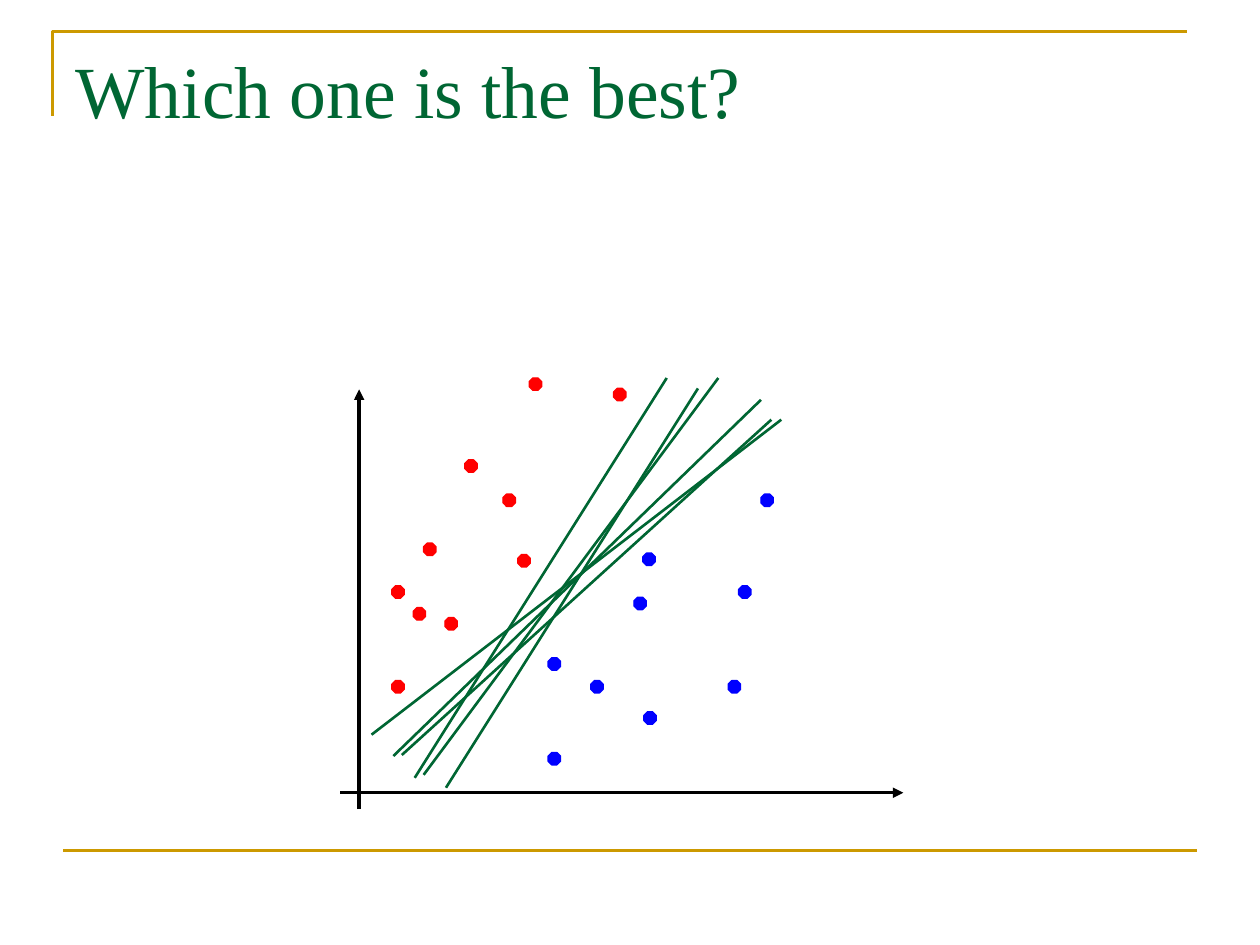
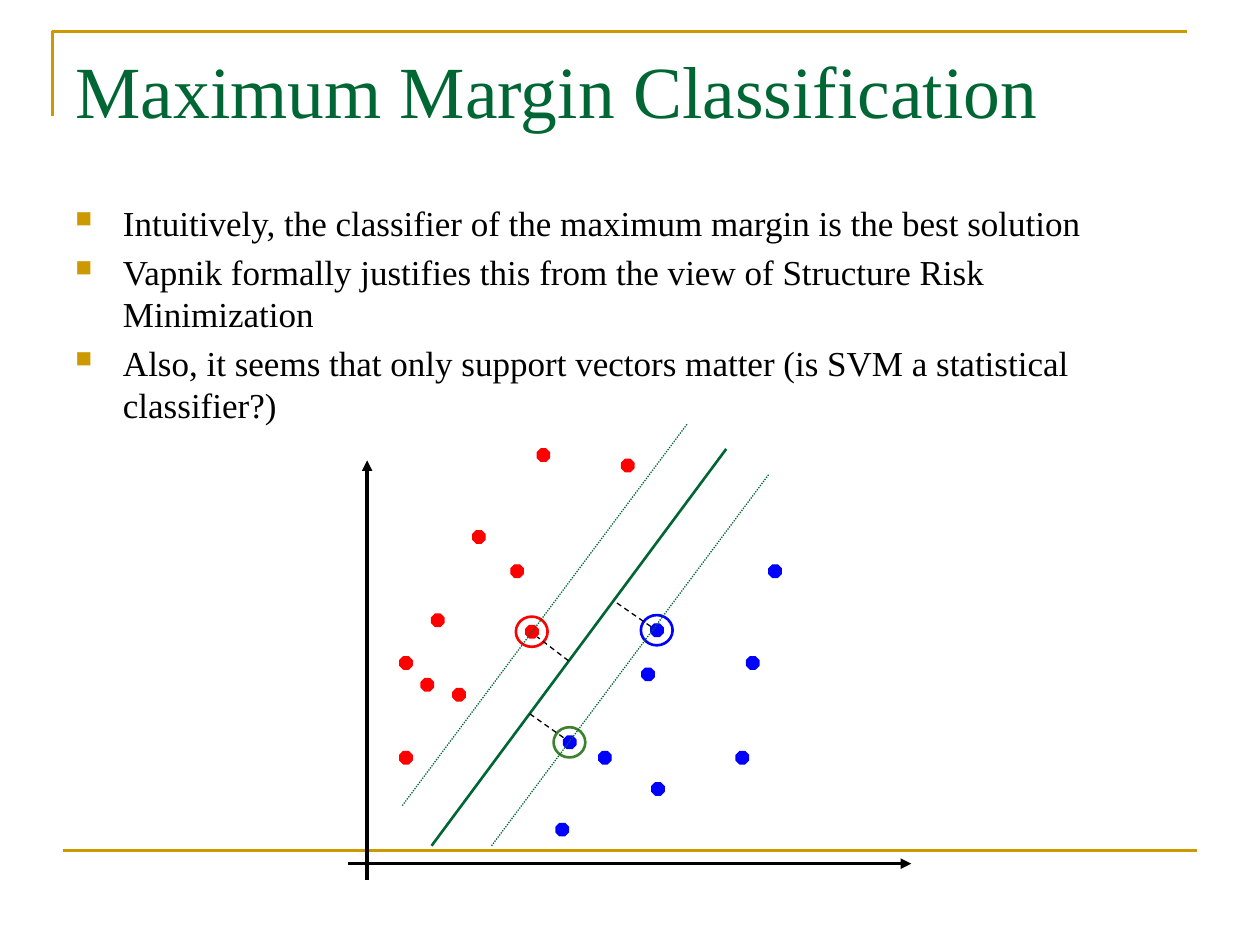
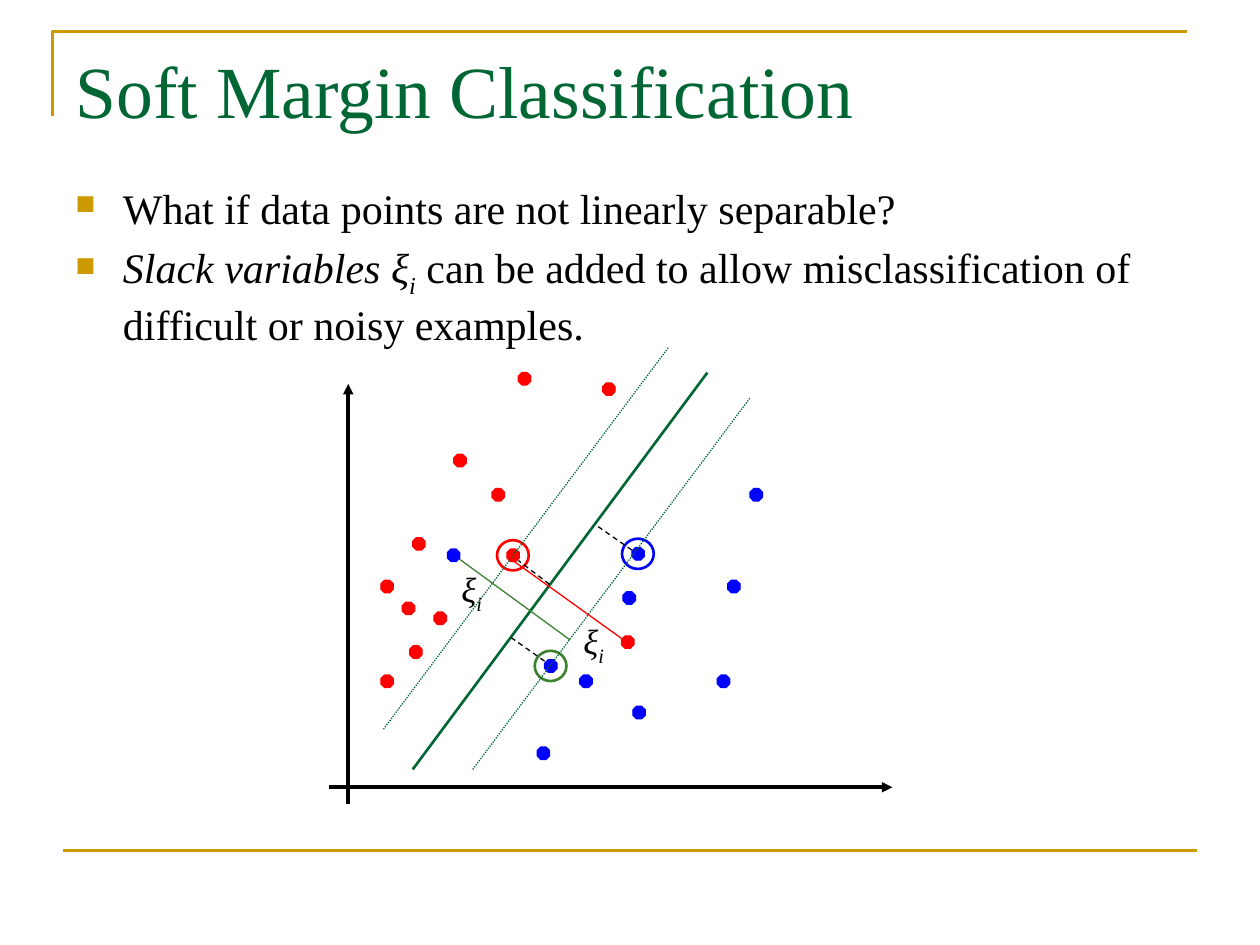
"""Build three slides on linear separators, maximum margin and soft margin."""
import pptx
import pptx.util
import pptx.dml.color
import pptx.enum.dml
import pptx.enum.shapes
import pptx.enum.text
import pptx.oxml

Cm = pptx.util.Cm
Pt = pptx.util.Pt
RGBColor = pptx.dml.color.RGBColor
Dash = pptx.enum.dml.MSO_LINE
Shape = pptx.enum.shapes.MSO_SHAPE

GOLD = RGBColor(0xCC, 0x99, 0x00)
GREEN = RGBColor(0x00, 0x66, 0x33)
LEAF = RGBColor(0x3B, 0x81, 0x2F)
RED = RGBColor(0xFF, 0x00, 0x00)
BLUE = RGBColor(0x00, 0x00, 0xFF)
BLACK = RGBColor(0x00, 0x00, 0x00)
FONT = "Times New Roman"
NS = 'xmlns:a="http://schemas.openxmlformats.org/drawingml/2006/main"'
BULLET = (
    f'<a:buClr {NS}><a:srgbClr val="{GOLD}"/></a:buClr>',
    f'<a:buSzPct {NS} val="65000"/>',
    f'<a:buFont {NS} typeface="Wingdings" pitchFamily="2" charset="2"/>',
    f'<a:buChar {NS} char="n"/>',
)

REDS = [(3.03, 5.89), (1.43, 4.9), (1.86, 3.4), (0.79, 2.13), (2.26, 6.58),
        (0.79, 4.04), (1.22, 3.6), (3.33, 4.67), (3.56, 8.23), (5.26, 8.02)]
BLUES = [(5.85, 4.7), (4.8, 2.13), (7.57, 2.13), (3.94, 0.68),
         (5.67, 3.81), (5.87, 1.5), (7.78, 4.04), (8.23, 5.89)]
AXES = [(0, -0.33, 0, 8.13), (-0.38, 0, 10.97, 0)]
BEST = (1.3, 0.36, 7.24, 8.36)
RIVALS = [(0.86, 0.76, 8.31, 7.52), (0.25, 1.17, 8.51, 7.52),
          (1.75, 0.1, 6.83, 8.15), (1.12, 0.3, 6.2, 8.36),
          (0.69, 0.74, 8.1, 7.92)]
EDGES = [(2.51, 0.36, 8.1, 7.85), (0.71, 1.17, 6.45, 8.86)]
GAPS = [(5.72, 4.78, 5.0, 5.28), (3.96, 2.54, 3.28, 3.02),
        (4.06, 4.09, 3.43, 4.57)]
RINGS = [(3.33, 4.67, RED), (4.09, 2.44, LEAF), (5.85, 4.7, BLUE)]
SLACKS = [(5.51, 3.0, 3.25, 4.62, RED), (2.24, 4.6, 4.47, 2.97, LEAF)]
LABELS = [(4.49, 3.51), (2.03, 4.55)]

SLIDES = [
    {"title": "Which one is the best?", "zero": (7.24, 15.98),
     "near": (3.94, 2.59), "kind": "rivals"},
    {"title": "Maximum Margin Classification", "zero": (7.4, 17.41),
     "near": (4.09, 2.44), "kind": "margin", "top": 3.94, "size": 20,
     "body": [
         [("Intuitively, the classifier of the maximum margin is the best solution", "")],
         [("Vapnik formally justifies this from the view of Structure Risk Minimization", "")],
         [("Also, it seems that only support vectors matter "
           "(is SVM a statistical classifier?)", "")]]},
    {"title": "Soft Margin Classification", "zero": (7.02, 15.87),
     "near": (4.09, 2.44), "kind": "soft", "top": 3.56, "size": 24,
     "body": [
         [("What if data points are not linearly separable?", "")],
         [("Slack variables ξ", "italic"), ("i", "sub"),
          (" can be added to allow misclassification of difficult or noisy examples.", "")]]},
]


def link(slide, zero, ends, hue, wide, dash=None, arrow=False):
    """Draw a line between two points measured right and up from zero, in cm."""
    x, y = zero
    line = slide.shapes.add_connector(
        pptx.enum.shapes.MSO_CONNECTOR.STRAIGHT,
        Cm(x + ends[0]), Cm(y - ends[1]), Cm(x + ends[2]), Cm(y - ends[3]))
    line.line.color.rgb = hue
    line.line.width = Pt(wide)
    if dash:
        line.line.dash_style = dash
    if arrow:
        line.line._get_or_add_ln().append(
            pptx.oxml.parse_xml(f'<a:tailEnd {NS} type="triangle"/>'))
    line._element.spPr.append(pptx.oxml.parse_xml(f"<a:effectLst {NS}/>"))


def write(para, text, size, hue=BLACK, style=""):
    """Add one run of text to a paragraph."""
    run = para.add_run()
    run.text = text
    run.font.name = FONT
    run.font.size = Pt(size)
    run.font.color.rgb = hue
    run.font.italic = style in ("italic", "sub")
    if style == "sub":
        run._r.get_or_add_rPr().set("baseline", "-25000")


deck = pptx.Presentation()
deck.slide_width = Cm(25.4)
deck.slide_height = Cm(19.05)

for page in SLIDES:
    slide = deck.slides.add_slide(deck.slide_layouts[5])
    zero = page["zero"]
    kind = page["kind"]

    pen = slide.shapes.build_freeform(Cm(1.06), Cm(2.33))
    pen.add_line_segments([(Cm(1.06), Cm(0.63)), (Cm(23.92), Cm(0.63))], close=False)
    frame = pen.convert_to_shape()
    frame.shadow.inherit = False
    frame.fill.background()
    frame.line.color.rgb = GOLD
    frame.line.width = Pt(1.5)
    link(slide, (1.27, 17.15), (0, 0, 22.86, 0), GOLD, 1.5)

    title = slide.shapes.title
    title.left, title.top, title.width, title.height = Cm(1.27), Cm(0.78), Cm(22.86), Cm(3.18)
    title.text_frame.vertical_anchor = pptx.enum.text.MSO_ANCHOR.TOP
    title.text_frame.auto_size = pptx.enum.text.MSO_AUTO_SIZE.NONE
    para = title.text_frame.paragraphs[0]
    para.alignment = pptx.enum.text.PP_ALIGN.LEFT
    write(para, page["title"], 42, GREEN)

    if "body" in page:
        box = slide.shapes.add_textbox(Cm(1.27), Cm(page["top"]), Cm(22.7), Cm(13.5))
        box.text_frame.word_wrap = True
        for rank, runs in enumerate(page["body"]):
            para = box.text_frame.add_paragraph() if rank else box.text_frame.paragraphs[0]
            para.space_before = Pt(page["size"] * 0.2)
            props = para._p.get_or_add_pPr()
            props.set("marL", str(Cm(0.96)))
            props.set("indent", str(-Cm(0.96)))
            for mark in BULLET:
                props.append(pptx.oxml.parse_xml(mark))
            for text, style in runs:
                write(para, text, page["size"], style=style)

    for ends in AXES:
        link(slide, zero, ends, BLACK, 2, arrow=True)

    reds = list(REDS)
    blues = BLUES + [page["near"]]
    if kind == "soft":
        reds += [(1.37, 2.72), (5.64, 2.92)]
        blues += [(2.13, 4.67)]
    for hue, spots in ((RED, reds), (BLUE, blues)):
        for x, y in spots:
            dot = slide.shapes.add_shape(
                Shape.OCTAGON, Cm(zero[0] + x - 0.13), Cm(zero[1] - y - 0.13),
                Cm(0.25), Cm(0.25))
            dot.shadow.inherit = False
            dot.fill.solid()
            dot.fill.fore_color.rgb = hue
            dot.line.color.rgb = hue
            dot.line.width = Pt(0.75)

    link(slide, zero, BEST, GREEN, 1.5)
    if kind == "rivals":
        for ends in RIVALS:
            link(slide, zero, ends, GREEN, 1.5)
        continue

    for x, y, hue in RINGS:
        ring = slide.shapes.add_shape(
            Shape.OVAL, Cm(zero[0] + x - 0.33), Cm(zero[1] - y - 0.31), Cm(0.64), Cm(0.61))
        ring.shadow.inherit = False
        ring.fill.background()
        ring.line.color.rgb = hue
        ring.line.width = Pt(1.5)
    for ends in GAPS:
        link(slide, zero, ends, BLACK, 0.75, Dash.DASH)
    for ends in EDGES:
        link(slide, zero, ends, GREEN, 0.75, Dash.ROUND_DOT)

    if kind == "soft":
        for *ends, hue in SLACKS:
            link(slide, zero, ends, hue, 0.75)
        for x, y in LABELS:
            label = slide.shapes.add_textbox(
                Cm(zero[0] + x), Cm(zero[1] - y), Cm(1.96), Cm(1.09))
            label.text_frame.word_wrap = True
            para = label.text_frame.paragraphs[0]
            write(para, "ξ", 20, style="italic")
            write(para, "i", 20, style="sub")

deck.save("out.pptx")
